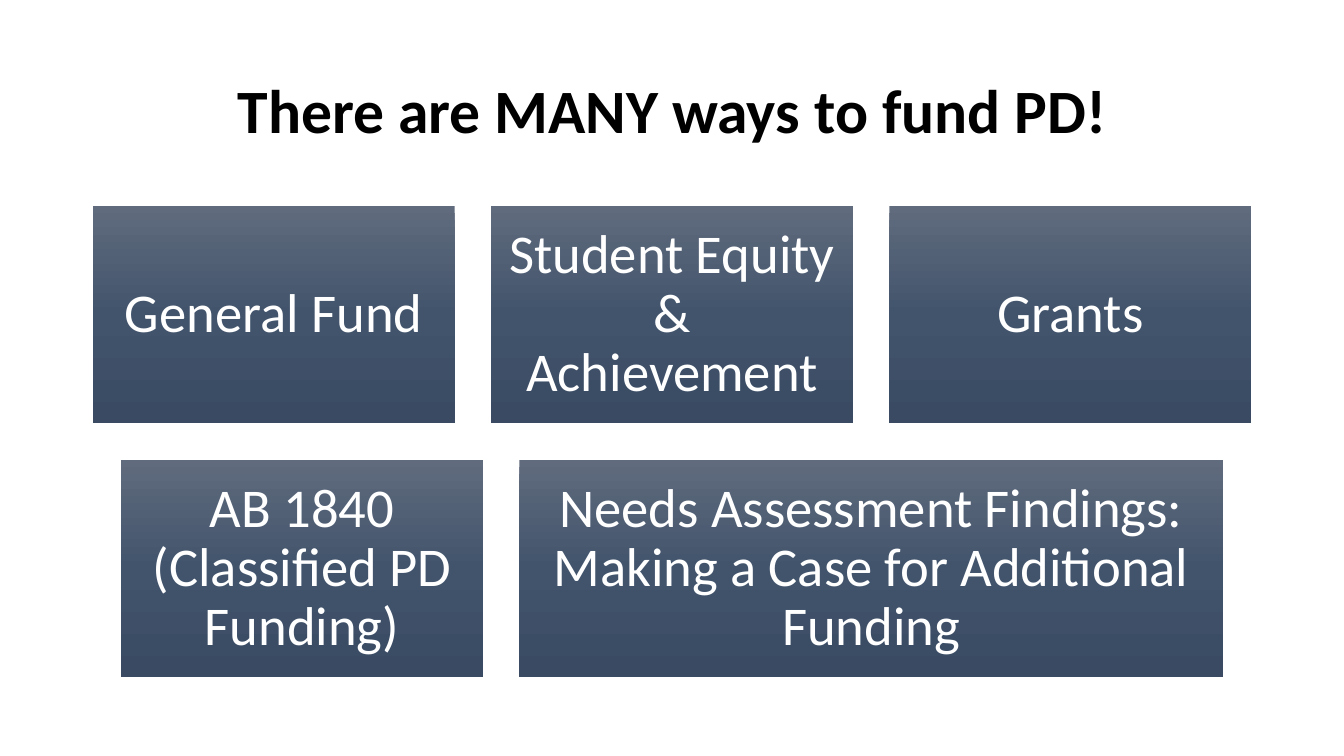
from copy import deepcopy

from pptx import Presentation
from pptx.dml.color import RGBColor
from pptx.enum.shapes import MSO_SHAPE as Shape
from pptx.enum.text import MSO_ANCHOR as Anchor, PP_ALIGN as Align
from pptx.oxml.ns import qn
from pptx.util import Inches, Pt

BLACK = RGBColor(0x00, 0x00, 0x00)
WHITE = RGBColor(0xFF, 0xFF, 0xFF)
SLATE_STOPS = [
    (0, RGBColor(0x60, 0x6B, 0x7D)),
    (0.5, RGBColor(0x42, 0x54, 0x6C)),
    (1, RGBColor(0x39, 0x4A, 0x62)),
]
FONT = "Calibri"
SLIDE_WIDTH, SLIDE_HEIGHT = 13.33, 7.5
CARD_HEIGHT, GAP, FIRST_TOP = 2.16, 0.36, 2.04
NARROW, WIDE = 3.59, 6.98
FUNDING_ROWS = [
    [("General Fund", NARROW), ("Student Equity & Achievement", NARROW), ("Grants", NARROW)],
    [
        ("AB 1840 (Classified PD Funding)", NARROW),
        ("Needs Assessment Findings: Making a Case for Additional Funding", WIDE),
    ],
]


def write_centred(frame, text, size, color, bold=False):
    frame.word_wrap = True
    frame.vertical_anchor = Anchor.MIDDLE
    paragraph = frame.paragraphs[0]
    paragraph.alignment = Align.CENTER
    paragraph.line_spacing = 0.9
    run = paragraph.add_run()
    run.text = text
    run.font.name = FONT
    run.font.size = Pt(size)
    run.font.bold = bold
    run.font.color.rgb = color


def set_title(slide, text):
    title = slide.shapes.title
    title.left, title.top = Inches(0.92), Inches(0.4)
    title.width, title.height = Inches(11.5), Inches(1.45)
    write_centred(title.text_frame, text, 44, BLACK, bold=True)


def fill_slate(card):
    card.fill.gradient()
    card.fill.gradient_angle = 270
    stop_list = card._element.spPr.find(qn("a:gradFill")).find(qn("a:gsLst"))
    stop_list.insert(1, deepcopy(stop_list[0]))
    for stop, (position, color) in zip(card.fill.gradient_stops, SLATE_STOPS):
        stop.position = position
        stop.color.rgb = color


def add_card(slide, text, left, top, width):
    card = slide.shapes.add_shape(
        Shape.RECTANGLE, Inches(left), Inches(top), Inches(width), Inches(CARD_HEIGHT)
    )
    card.shadow.inherit = False
    card.line.fill.background()
    fill_slate(card)
    frame = card.text_frame
    frame.margin_left = frame.margin_right = Inches(0.16)
    frame.margin_top = frame.margin_bottom = Inches(0.16)
    write_centred(frame, text, 39, WHITE)


def add_card_row(slide, cards, top):
    row_width = sum(width for _, width in cards) + GAP * (len(cards) - 1)
    left = (SLIDE_WIDTH - row_width) / 2
    for text, width in cards:
        add_card(slide, text, left, top, width)
        left += width + GAP


def main():
    deck = Presentation()
    deck.slide_width, deck.slide_height = Inches(SLIDE_WIDTH), Inches(SLIDE_HEIGHT)
    slide = deck.slides.add_slide(deck.slide_layouts.get_by_name("Title Only"))
    set_title(slide, "There are MANY ways to fund PD!")
    for index, cards in enumerate(FUNDING_ROWS):
        add_card_row(slide, cards, FIRST_TOP + index * (CARD_HEIGHT + GAP))
    deck.save("out.pptx")


if __name__ == "__main__":
    main()
